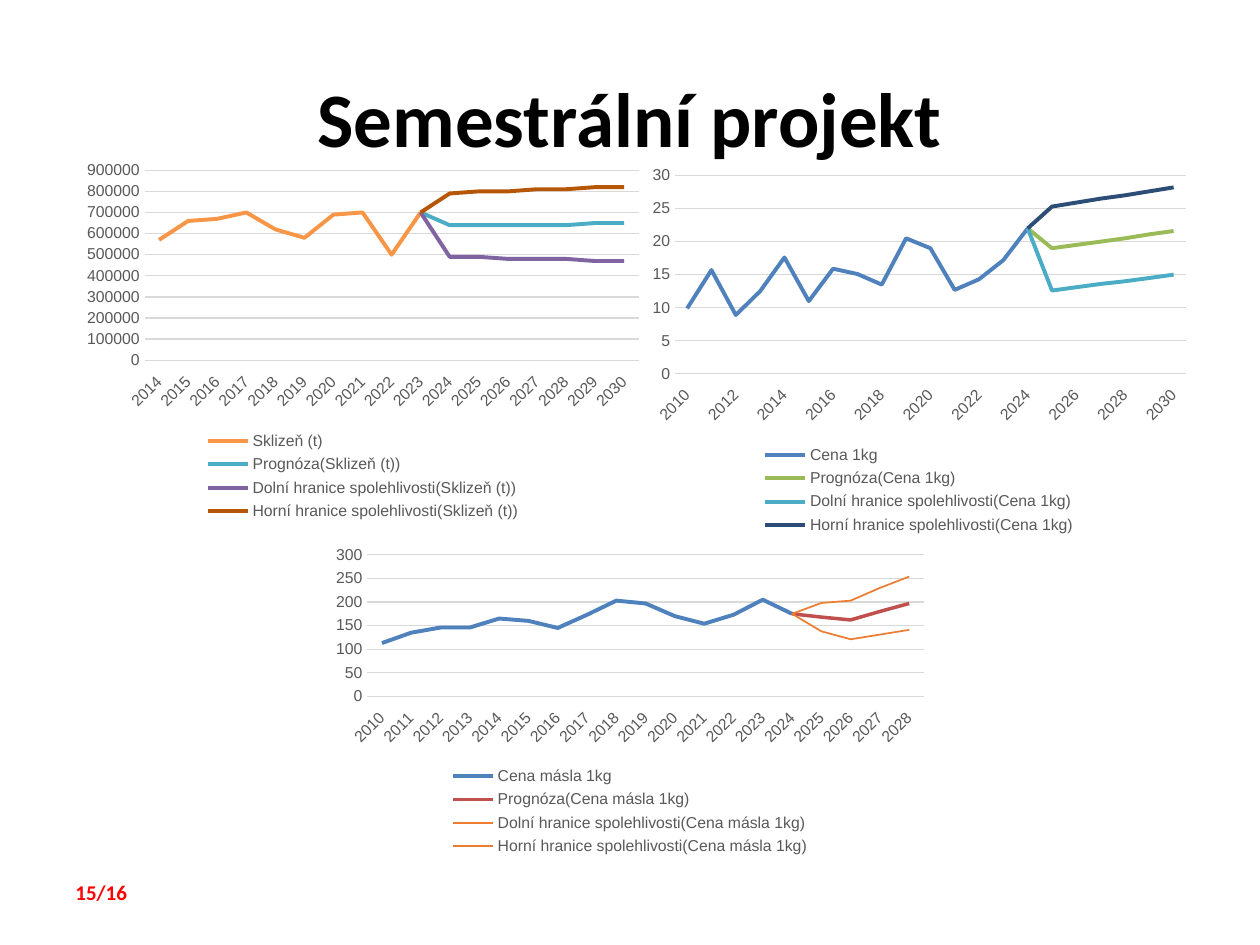
from dataclasses import dataclass

from pptx import Presentation
from pptx.chart.data import CategoryChartData
from pptx.dml.color import RGBColor
from pptx.enum.chart import XL_CHART_TYPE as ChartType
from pptx.enum.chart import XL_LEGEND_POSITION as LegendPosition
from pptx.enum.chart import XL_TICK_LABEL_POSITION as LabelPosition
from pptx.enum.chart import XL_TICK_MARK as TickMark
from pptx.enum.text import MSO_ANCHOR as Anchor
from pptx.enum.text import PP_ALIGN as Align
from pptx.oxml import parse_xml
from pptx.oxml.ns import nsdecls
from pptx.util import Inches, Pt


@dataclass(frozen=True)
class Theme:
    text_font: str = "Calibri"
    chart_font: str = "Arial"
    title_size: float = 44
    page_size: float = 12
    chart_size: float = 10
    label_size: float = 9
    hairline: float = 0.75
    thin: float = 1
    medium: float = 2
    thick: float = 2.25
    black: str = "000000"
    page_red: str = "FF0000"
    label_gray: str = "595959"
    grid_gray: str = "D9D9D9"
    orange: str = "F79646"
    teal: str = "4BACC6"
    purple: str = "8064A2"
    brown: str = "B65708"
    blue: str = "4F81BD"
    green: str = "9BBB59"
    navy: str = "2C4D75"
    red: str = "C0504D"
    amber: str = "ED7D31"


def color(code):
    return RGBColor.from_string(code)


class SlideBuilder:
    COLUMNS, ROWS = 100, 75

    def __init__(self, deck, theme):
        self.deck = deck
        self.theme = theme
        self.slide = deck.slides.add_slide(deck.slide_layouts[6])

    def place(self, left, top, width, height):
        column = self.deck.slide_width / self.COLUMNS
        row = self.deck.slide_height / self.ROWS
        return (round(left * column), round(top * row),
                round(width * column), round(height * row))

    def style(self, font, name, size, code, bold=False):
        font.name = name
        font.size = Pt(size)
        font.color.rgb = color(code)
        font.bold = bold

    def style_line(self, line, code, width):
        line.color.rgb = color(code)
        line.width = Pt(width)

    def text(self, area, wording, size, code, align=Align.LEFT, anchor=Anchor.TOP):
        frame = self.slide.shapes.add_textbox(*self.place(*area)).text_frame
        frame.word_wrap = True
        frame.vertical_anchor = anchor
        paragraph = frame.paragraphs[0]
        paragraph.text = wording
        paragraph.alignment = align
        self.style(paragraph.font, self.theme.text_font, size, code, bold=True)

    def style_labels(self, font):
        self.style(font, self.theme.chart_font, self.theme.label_size, self.theme.label_gray)

    def forecast_chart(self, area, first_year, top_value, step, subject,
                       observed, forecasts, lines, label_skip=1):
        theme = self.theme
        lead = len(observed) - 1
        horizon = len(forecasts[0])
        data = CategoryChartData()
        data.categories = [str(first_year + i) for i in range(len(observed) + horizon)]
        data.add_series(subject, observed + [None] * horizon)
        prefixes = ("Prognóza", "Dolní hranice spolehlivosti", "Horní hranice spolehlivosti")
        for prefix, values in zip(prefixes, forecasts):
            data.add_series(f"{prefix}({subject})", [None] * lead + observed[-1:] + values)

        chart = self.slide.shapes.add_chart(ChartType.LINE, *self.place(*area), data).chart
        chart.has_title = False
        self.style(chart.font, theme.chart_font, theme.chart_size, theme.black)
        chart.has_legend = True
        chart.legend.position = LegendPosition.BOTTOM
        chart.legend.include_in_layout = False
        self.style_labels(chart.legend.font)
        chart.plots[0].vary_by_categories = False
        for series, (code, width) in zip(chart.plots[0].series, lines):
            series.smooth = False
            self.style_line(series.format.line, code, width)

        years, amounts = chart.category_axis, chart.value_axis
        for axis in (years, amounts):
            axis.major_tick_mark = axis.minor_tick_mark = TickMark.NONE
            self.style_labels(axis.tick_labels.font)
        years.tick_label_position = LabelPosition.LOW
        self.style_line(years.format.line, theme.grid_gray, theme.hairline)
        years._element.txPr.bodyPr.set("rot", str(-45 * 60000))
        skip = parse_xml(f'<c:tickLblSkip {nsdecls("c")} val="{label_skip}"/>')
        years._element.xpath("c:noMultiLvlLbl")[0].addprevious(skip)

        amounts.minimum_scale = 0
        amounts.maximum_scale = top_value
        amounts.major_unit = step
        amounts.tick_labels.number_format = "General"
        amounts.tick_labels.number_format_is_linked = False
        amounts.format.line.fill.background()
        amounts.has_major_gridlines = True
        self.style_line(amounts.major_gridlines.format.line, theme.grid_gray, theme.hairline)


def main():
    deck = Presentation()
    deck.slide_width, deck.slide_height = Inches(10), Inches(7.5)
    theme = Theme()
    page = SlideBuilder(deck, theme)

    page.text((5, 3, 90, 12.5), "Semestrální projekt", theme.title_size, theme.black,
              Align.CENTER, Anchor.MIDDLE)
    page.text((5, 69.3, 9.2, 3), "15/16", theme.page_size, theme.page_red)

    page.forecast_chart(
        (6, 12.2, 45.6, 29.5), 2014, 900000, 100000, "Sklizeň (t)",
        [570000, 660000, 670000, 700000, 620000, 580000, 690000, 700000, 500000, 700000],
        [[640000, 640000, 640000, 640000, 640000, 650000, 650000],
         [490000, 490000, 480000, 480000, 480000, 470000, 470000],
         [790000, 800000, 800000, 810000, 810000, 820000, 820000]],
        [(code, theme.thick) for code in (theme.orange, theme.teal, theme.purple, theme.brown)])

    page.forecast_chart(
        (50.9, 12.6, 44.1, 30.2), 2010, 30, 5, "Cena 1kg",
        [9.9, 15.7, 8.9, 12.5, 17.6, 11, 15.9, 15.1, 13.5, 20.5, 19, 12.7, 14.3, 17.2, 22],
        [[19, 19.5, 20, 20.5, 21.1, 21.6],
         [12.6, 13.1, 13.6, 14, 14.5, 15],
         [25.3, 25.9, 26.5, 27, 27.6, 28.2]],
        [(code, theme.thick) for code in (theme.blue, theme.green, theme.teal, theme.navy)],
        label_skip=2)

    page.forecast_chart(
        (25.7, 42.8, 48.6, 25.5), 2010, 300, 50, "Cena másla 1kg",
        [113, 135, 146, 146, 165, 160, 145, 173, 203, 197, 170, 154, 173, 205, 175],
        [[168, 162, 180, 197], [138, 121, 131, 141], [198, 203, 230, 254]],
        [(theme.blue, theme.thick), (theme.red, theme.medium),
         (theme.amber, theme.thin), (theme.amber, theme.thin)])

    deck.save("out.pptx")


if __name__ == "__main__":
    main()
